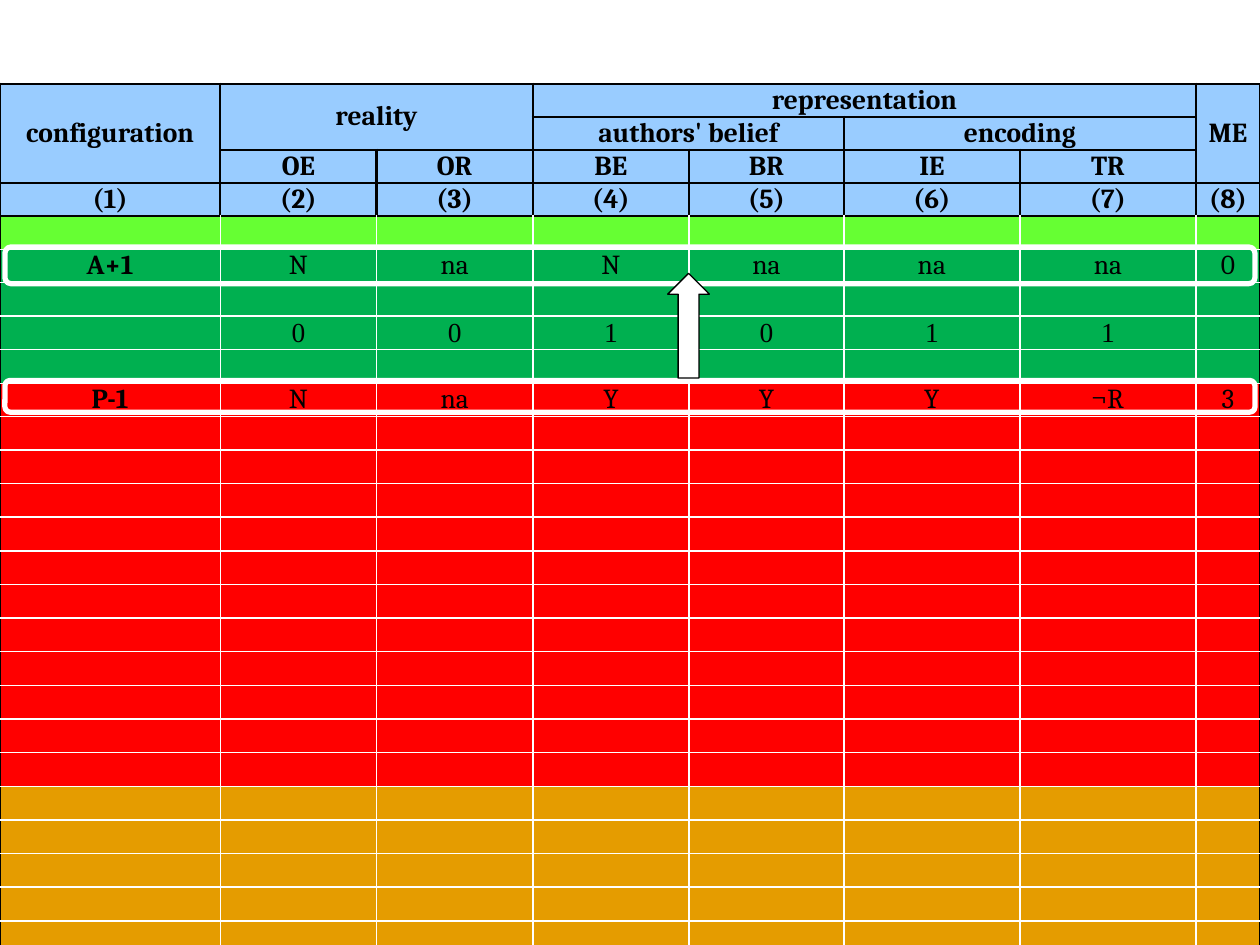
from lxml.etree import SubElement
from pptx import Presentation
from pptx.dml.color import RGBColor
from pptx.enum.shapes import MSO_SHAPE as Preset
from pptx.enum.text import MSO_ANCHOR as Anchor, PP_ALIGN as Align
from pptx.oxml.ns import qn
from pptx.util import Cm, Pt

# Content: one entry per table row, header first
HEADER = [
    ["configuration", "reality", "", "representation", "", "", "", "ME"],
    ["", "", "", "authors' belief", "", "encoding", "", ""],
    ["", "OE", "OR", "BE", "BR", "IE", "TR", ""],
    ["(1)", "(2)", "(3)", "(4)", "(5)", "(6)", "(7)", "(8)"],
]
# (first row, first column, last row, last column)
MERGES = [(0, 0, 2, 0), (0, 1, 1, 2), (0, 3, 0, 6), (0, 7, 2, 7),
          (1, 3, 1, 4), (1, 5, 1, 6)]
# Coloured bands below the header: (fill, number of rows)
BANDS = [("99CCFF", 4), ("66FF33", 1), ("00B050", 4), ("FF0000", 12), ("E59C00", 5)]
BODY = {
    5: ["A+1", "N", "na", "N", "na", "na", "na", "0"],
    7: ["", "0", "0", "1", "0", "1", "1", ""],
    9: ["P-1", "N", "na", "Y", "Y", "Y", "¬R", "3"],
}
TIMES_ROW = 7

# Layout in centimetres
WIDTH, HEIGHT = 25.4, 19.05
TABLE_TOP, ROW_HEIGHT = 1.69, 0.665
COLUMNS = [4.44, 3.15, 3.15, 3.15, 3.12, 3.55, 3.55, 1.29]
BLACK, WHITE = "000000", "FFFFFF"
OUTER, INNER = (BLACK, 1.5), (WHITE, 1)
FONT_SIZE = Pt(15.7)

# Shapes over the table: preset, left, top, width, height, fill, line, line width
OVERLAYS = [
    (Preset.ROUNDED_RECTANGLE, 0.1, 7.67, 25.2, 0.64, None, WHITE, 3),
    (Preset.ROUNDED_RECTANGLE, 0.1, 4.98, 25.2, 0.74, None, WHITE, 3),
    (Preset.DOWN_ARROW, 13.46, 5.51, 0.84, 2.11, WHITE, BLACK, 0.75),
]


def color(value):
    return RGBColor.from_string(value)


def add_shape(slide, preset, left, top, width, height, fill, line, line_width):
    shape = slide.shapes.add_shape(preset, Cm(left), Cm(top), Cm(width), Cm(height))
    shape.shadow.inherit = False
    if fill:
        shape.fill.solid()
        shape.fill.fore_color.rgb = color(fill)
    else:
        shape.fill.background()
    if line:
        shape.line.color.rgb = color(line)
        shape.line.width = Pt(line_width)
    else:
        shape.line.fill.background()
    return shape


def add_borders(cell, borders):
    properties = cell._tc.get_or_add_tcPr()
    for side, (line, width) in zip("LRTB", borders):
        border = SubElement(properties, qn(f"a:ln{side}"), w=str(Pt(width)))
        fill = SubElement(border, qn("a:solidFill"))
        SubElement(fill, qn("a:srgbClr"), val=line)


def cell_borders(row, column, last_row, last_column):
    """Left, right, top and bottom: black in the header and on the outer edge."""
    header_rows = len(HEADER)
    if row < header_rows:
        return [OUTER] * 4
    edges = (column == 0, column == last_column, row == header_rows, row == last_row)
    return [OUTER if edge else INNER for edge in edges]


def write_cell(cell, text, bold, font_name, indent):
    paragraph = cell.text_frame.paragraphs[0]
    paragraph.alignment = Align.CENTER
    if not text:
        # An empty cell still needs its size, or it would stretch the row
        SubElement(paragraph._p, qn("a:endParaRPr"), sz=str(int(FONT_SIZE.pt * 100)))
        return
    if indent:
        paragraph._p.get_or_add_pPr().set("indent", str(Cm(indent)))
    run = paragraph.add_run()
    run.text = text
    for name, value in {"name": font_name, "size": FONT_SIZE, "bold": bold}.items():
        setattr(run.font, name, value)
    run.font.color.rgb = color(BLACK)


def add_configuration_table(slide):
    fills = [fill for fill, count in BANDS for _ in range(count)]
    last_row, last_column = len(fills) - 1, len(COLUMNS) - 1
    table = slide.shapes.add_table(
        len(fills), len(COLUMNS), Cm(0), Cm(TABLE_TOP),
        Cm(WIDTH), Cm(ROW_HEIGHT * len(fills))).table
    table.first_row = table.horz_banding = False
    for column, width in zip(table.columns, COLUMNS):
        column.width = Cm(width)

    cell_format = {"margin_left": 0, "margin_right": 0, "margin_top": 0,
                   "margin_bottom": 0, "vertical_anchor": Anchor.MIDDLE}
    texts = dict(enumerate(HEADER)) | BODY
    blank_row = [""] * len(COLUMNS)
    for row, fill in enumerate(fills):
        table.rows[row].height = Cm(ROW_HEIGHT)
        font_name = "Times New Roman" if row == TIMES_ROW else "Cambria"
        for column, text in enumerate(texts.get(row, blank_row)):
            cell = table.cell(row, column)
            for name, value in cell_format.items():
                setattr(cell, name, value)
            bold = row < len(HEADER) or column == 0
            indent = -0.18 if column == last_column else 0
            write_cell(cell, text, bold, font_name, indent)
            add_borders(cell, cell_borders(row, column, last_row, last_column))
            cell.fill.solid()
            cell.fill.fore_color.rgb = color(fill)

    for top, left, bottom, right in MERGES:
        table.cell(top, left).merge(table.cell(bottom, right))


def main():
    presentation = Presentation()
    presentation.slide_width, presentation.slide_height = Cm(WIDTH), Cm(HEIGHT)
    slide = presentation.slides.add_slide(presentation.slide_layouts[6])

    # Translucent panel behind the table
    panel = add_shape(slide, Preset.RECTANGLE, 0, TABLE_TOP, WIDTH,
                      HEIGHT - TABLE_TOP, "002060", None, 0)
    panel_color = panel.fill._xPr.find(qn("a:solidFill"))[0]
    SubElement(panel_color, qn("a:alpha"), val="60000")

    add_configuration_table(slide)

    # Row highlights and the arrow pointing up between them
    for overlay in OVERLAYS:
        shape = add_shape(slide, *overlay)
    shape.rotation = 180

    presentation.save("out.pptx")


if __name__ == "__main__":
    main()
